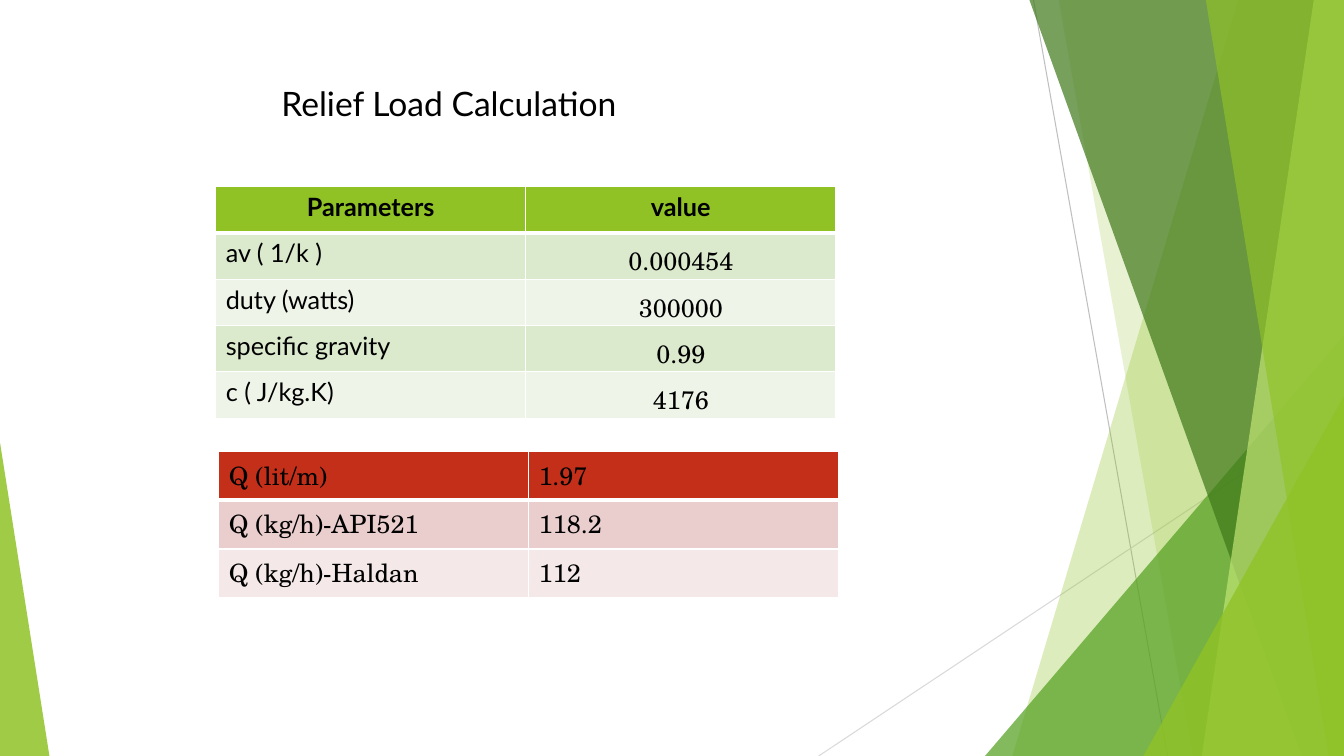
from lxml import etree
from pptx import Presentation
from pptx.dml.color import RGBColor
from pptx.enum.shapes import MSO_CONNECTOR as Connector, MSO_SHAPE as Shape
from pptx.enum.text import MSO_ANCHOR as Anchor, PP_ALIGN as Align
from pptx.oxml.ns import qn
from pptx.util import Inches, Pt

WIDTH, HEIGHT = 13.33, 7.5
SANS, SERIF = "Lato", "TeX Gyre Schola"
GREEN = "90C226"


def color(value):
    return RGBColor.from_string(value)


def paint(shape, value, opacity):
    """Fill a shape with a translucent colour and no outline."""
    shape.shadow.inherit = False
    shape.line.fill.background()
    shape.fill.solid()
    shape.fill.fore_color.rgb = color(value)
    swatch = shape.fill._xPr.find(qn("a:solidFill"))[0]
    etree.SubElement(swatch, qn("a:alpha"), val=str(opacity * 1000))


def add_thin_line(slide, start, end, value):
    line = slide.shapes.add_connector(
        Connector.STRAIGHT, *(Inches(length) for length in start + end))
    line.line.color.rgb = color(value)
    line.line.width = Pt(0.75)
    etree.SubElement(line._element.spPr, qn("a:effectLst"))


def add_band(slide, top_left, top_right, bottom_left, value, opacity):
    """Add a slanted band that runs down to the right edge of the slide."""
    points = [(top_left, 0), (top_right, 0), (WIDTH, HEIGHT), (bottom_left, HEIGHT)]
    points = [(Inches(x), Inches(y)) for x, y in points]
    builder = slide.shapes.build_freeform(*points[0], scale=1.0)
    builder.add_line_segments(points[1:], close=True)
    paint(builder.convert_to_shape(), value, opacity)


def add_corner(slide, box, peak, value, opacity):
    """Add a triangle whose peak lies at the left (0) or right (1) of its box."""
    corner = slide.shapes.add_shape(
        Shape.ISOSCELES_TRIANGLE, *(Inches(length) for length in box))
    corner.adjustments[0] = peak
    paint(corner, value, opacity)


def add_facets(slide):
    add_thin_line(slide, (10.25, 0), (11.58, HEIGHT), "BFBFBF")
    add_thin_line(slide, (WIDTH, 4.03), (8.12, HEIGHT), "D9D9D9")
    add_band(slide, 12.28, WIDTH, 10.04, GREEN, 30)
    add_band(slide, 10.5, WIDTH, 11.83, GREEN, 20)
    add_corner(slide, (9.77, 3.33, 3.56, 4.17), 1, "54A021", 72)
    add_band(slide, 10.21, WIDTH, 12.91, "3F7819", 70)
    add_band(slide, 13.03, WIDTH, 11.92, "C0E474", 70)
    add_band(slide, 11.96, WIDTH, 13.18, GREEN, 65)
    add_corner(slide, (11.34, 3.93, 1.99, 3.57), 1, GREEN, 80)
    add_corner(slide, (0, 4.39, 0.49, 3.11), 0, GREEN, 85)


def format_text(para, font_name, size, bold=False):
    for span in para.runs:
        span.font.name = font_name
        span.font.size = Pt(size)
        span.font.bold = bold
        span.font.color.rgb = color("000000")


def add_title(slide, box, text):
    title = slide.shapes.title
    title.left, title.top, title.width, title.height = (
        Inches(length) for length in box)
    frame = title.text_frame
    frame.text = text
    frame.vertical_anchor = Anchor.MIDDLE
    frame.paragraphs[0].alignment = Align.LEFT
    format_text(frame.paragraphs[0], SANS, 24)


def set_borders(cell, bottom_width):
    properties = cell._tc.get_or_add_tcPr()
    widths = {"a:lnL": 1, "a:lnR": 1, "a:lnT": 1, "a:lnB": bottom_width}
    for position, (tag, width) in enumerate(widths.items()):
        border = etree.Element(qn(tag), w=str(Pt(width)))
        fill = etree.SubElement(border, qn("a:solidFill"))
        etree.SubElement(fill, qn("a:srgbClr"), val="FFFFFF")
        properties.insert(position, border)


def add_banded_table(slide, box, rows, fills):
    """Add a table with a header fill and two alternating band fills."""
    table = slide.shapes.add_table(
        len(rows), len(rows[0]), *(Inches(length) for length in box)).table
    header, *bands = fills
    for index, values in enumerate(rows):
        table.rows[index].height = Inches(box[3] / len(rows))
        for column, value in enumerate(values):
            cell = table.cell(index, column)
            cell.text = value
            cell.fill.solid()
            cell.fill.fore_color.rgb = color(
                bands[(index - 1) % 2] if index else header)
            set_borders(cell, 1 if index else 3)
            format_text(cell.text_frame.paragraphs[0], SERIF, 18)
    return table


def add_parameters(slide, box):
    rows = [
        ("Parameters", "value"),
        ("av ( 1/k )", "0.000454"),
        ("duty (watts)", "300000"),
        ("specific gravity", "0.99"),
        ("c ( J/kg.K)", "4176"),
    ]
    table = add_banded_table(slide, box, rows, (GREEN, "DBE9CD", "EEF4E8"))
    for index in range(len(rows)):
        name, value = table.cell(index, 0), table.cell(index, 1)
        format_text(name.text_frame.paragraphs[0], SANS, 18, bold=index == 0)
        value.text_frame.paragraphs[0].alignment = Align.CENTER
        if index == 0:
            name.text_frame.paragraphs[0].alignment = Align.CENTER
            format_text(value.text_frame.paragraphs[0], SANS, 18, bold=True)
        else:
            value.vertical_anchor = Anchor.BOTTOM
            value.margin_left = value.margin_right = value.margin_top = Inches(0.01)
            value.margin_bottom = 0


def add_results(slide, box):
    rows = [
        ("Q (lit/m)", "1.97"),
        ("Q (kg/h)-API521", "118.2"),
        ("Q (kg/h)-Haldan", "112"),
    ]
    add_banded_table(slide, box, rows, ("C42F1A", "EACDCD", "F5E8E8"))


def main():
    deck = Presentation()
    deck.slide_width, deck.slide_height = Inches(WIDTH), Inches(HEIGHT)
    slide = deck.slides.add_slide(deck.slide_layouts[5])
    add_facets(slide)
    add_title(slide, (2.69, 0.7, 5, 0.65), "Relief Load Calculation")
    add_parameters(slide, (2.14, 1.85, 6.15, 2.3))
    add_results(slide, (2.17, 4.48, 6.15, 1.45))
    deck.save("out.pptx")


if __name__ == "__main__":
    main()
